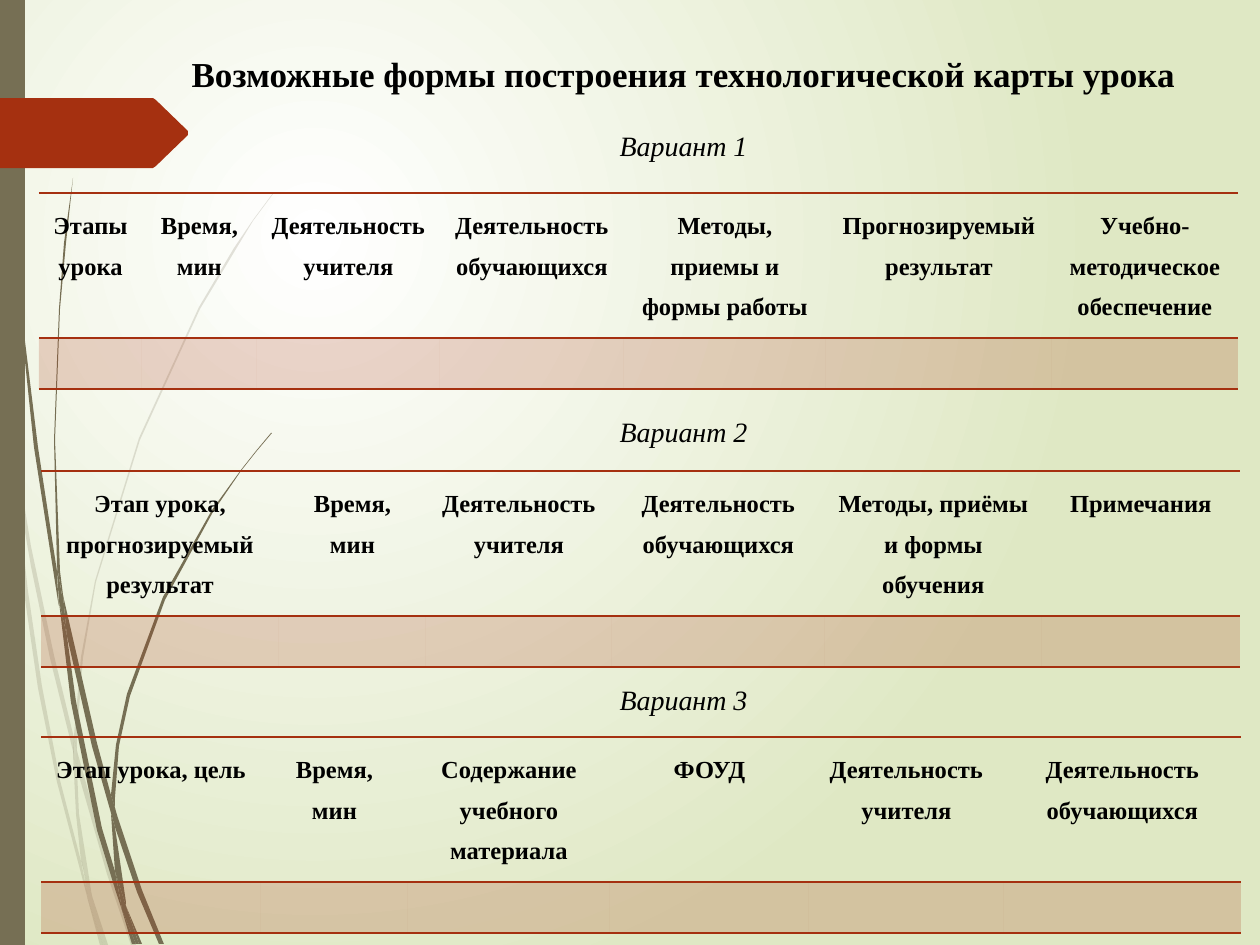
"""Build the slide with three variants of a lesson technology map."""
from lxml import etree
from pptx import Presentation
from pptx.dml.color import RGBColor
from pptx.enum.shapes import MSO_SHAPE
from pptx.enum.text import MSO_ANCHOR, PP_ALIGN
from pptx.oxml.ns import qn
from pptx.util import Emu, Pt

RECTANGLE = MSO_SHAPE.RECTANGLE
CENTER = PP_ALIGN.CENTER
TOP = MSO_ANCHOR.TOP

SCALE = 914400 / 126
WIDTH, HEIGHT = 1260, 945
FONT = "Times New Roman"
NO_STYLE = "{2D5ABB26-0587-4C30-8999-92F81FD0307C}"
ROW_HEIGHTS = (145, 51)
COLORS = {"center": "FFFFFF", "edge": "DFE8C4", "stem": "766F54",
          "accent": "A53010", "text": "000000"}

PALE_STEMS = (
    ((10, 441), (8, 406), (0, 355), (0, 377), (9, 433)),
    ((50, 658), (74, 755), (74, 738), (54, 655), (31, 546), (13, 435),
     (15, 474), (31, 566)),
    ((81, 765), (77, 751), (77, 769), (107, 874), (131, 945), (136, 945), (111, 872)),
    ((105, 945), (108, 945), (92, 896)),
    ((81, 861), (60, 780), (42, 686), (28, 591), (15, 474), (10, 441), (24, 592),
     (38, 688), (57, 782), (81, 873), (88, 900), (87, 891)),
    ((73, 755), (76, 814), (81, 861), (84, 872), (92, 896), (91, 890), (79, 814),
     (77, 769), (77, 766)),
    ((77, 736), (83, 658), (96, 582), (140, 440), (200, 309), (236, 249), (253, 221),
     (273, 194), (273, 193), (253, 220), (234, 248), (199, 307), (139, 438),
     (95, 581), (81, 657), (74, 736), (74, 738), (77, 751)),
    ((88, 900), (100, 945), (103, 945)),
    ((77, 766), (77, 769), (77, 751), (74, 738), (73, 755)),
    ((84, 872), (82, 861), (87, 891), (88, 900), (103, 945), (105, 945), (92, 896)),
)
DARK_STEMS = (
    ((6, 139), (18, 294), (34, 447), (58, 601), (59, 606), (57, 576), (57, 571),
     (38, 447), (19, 292), (8, 137), (5, 60), (4, 0), (3, 0), (4, 60)),
    ((92, 746), (111, 813), (111, 798), (111, 795), (97, 743), (63, 595), (67, 636)),
    ((118, 818), (115, 808), (115, 827), (137, 892), (159, 944), (164, 944), (142, 890)),
    ((115, 871), (102, 828), (76, 701), (67, 636), (59, 601), (71, 702), (97, 830),
     (116, 892), (122, 910), (121, 903)),
    ((63, 595), (60, 571), (55, 440), (60, 309), (66, 243), (73, 178), (64, 243),
     (59, 309), (54, 440), (57, 566), (62, 595)),
    ((139, 944), (142, 944), (126, 906)),
    ((59, 601), (67, 636), (63, 595), (62, 595), (57, 566), (57, 571)),
    ((115, 798), (119, 746), (130, 696), (165, 600), (213, 512), (241, 471),
     (256, 452), (272, 433), (271, 433), (256, 451), (241, 470), (212, 510),
     (163, 597), (127, 694), (116, 745), (111, 795), (115, 808)),
    ((122, 910), (132, 944), (136, 944)),
    ((111, 813), (115, 871), (121, 890), (126, 906), (126, 902), (115, 827), (113, 820)),
    ((111, 813), (113, 820), (115, 827), (115, 808), (111, 795)),
    ((121, 890), (115, 871), (121, 903), (122, 910), (136, 944), (139, 944), (126, 906)),
)
ARROW = ((188, 135), (156, 166), (153, 168), (0, 168), (0, 98), (153, 98),
         (156, 100), (188, 131))

VARIANTS = (
    ("Вариант 1", (606, 122, 155, 47), 1.0, (39, 193), (
        ("Этапы урока", 103), ("Время, мин", 115), ("Деятельность учителя", 183),
        ("Деятельность обучающихся", 184), ("Методы, приемы и формы работы", 202),
        ("Прогнозируемый результат", 226), ("Учебно-методическое обеспечение", 186))),
    ("Вариант 2", (606, 392, 155, 58), 1.5, (41, 471), (
        ("Этап урока, прогнозируемый результат", 238), ("Время, мин", 147),
        ("Деятельность учителя", 186), ("Деятельность обучающихся", 213),
        ("Методы, приёмы и формы обучения", 217), ("Примечания", 198))),
    ("Вариант 3", (606, 660, 155, 58), 1.5, (41, 737), (
        ("Этап урока, цель", 220), ("Время, мин", 147),
        ("Содержание учебного материала", 202), ("ФОУД", 199),
        ("Деятельность учителя", 195), ("Деятельность обучающихся", 237))),
)


def px(length):
    """Turn pixels into EMU."""
    return Emu(round(length * SCALE))


def color(name):
    """Return a palette colour."""
    return RGBColor.from_string(COLORS[name])


def set_background(slide):
    """Fill the background with a radial gradient."""
    fill = slide.background.fill
    fill.gradient()
    for stop, name in zip(fill.gradient_stops, ("center", "edge")):
        stop.color.rgb = color(name)
    linear = next(slide.element.iter(qn("a:lin")))
    radial = etree.Element(qn("a:path"), path="circle")
    etree.SubElement(radial, qn("a:fillToRect"), l="50000", t="50000",
                     r="100000", b="100000")
    linear.getparent().replace(linear, radial)


def paint(shape, name):
    """Give a shape a flat fill without line or shadow."""
    shape.shadow.inherit = False
    shape.fill.solid()
    shape.fill.fore_color.rgb = color(name)
    shape.line.fill.background()


def make_pale(element):
    """Make the solid fill of an element 20 percent opaque."""
    rgb = next(element.iter(qn("a:srgbClr")))
    etree.SubElement(rgb, qn("a:alpha"), val="20000")


def add_outline(slide, points, name):
    """Draw a filled polygon."""
    builder = slide.shapes.build_freeform(*points[0], scale=SCALE)
    builder.add_line_segments(points[1:], close=True)
    shape = builder.convert_to_shape()
    paint(shape, name)
    return shape


def add_decoration(slide):
    """Draw the stems, the side bar and the arrow."""
    for points in PALE_STEMS:
        make_pale(add_outline(slide, points, "stem").element)
    for points in DARK_STEMS:
        add_outline(slide, points, "stem")
    paint(slide.shapes.add_shape(RECTANGLE, 0, 0, px(25), px(HEIGHT)), "stem")
    add_outline(slide, ARROW, "accent")


def write(frame, text, size, spacing=1.5, bold=False, italic=False):
    """Write one centred paragraph."""
    paragraph = frame.paragraphs[0]
    paragraph.text = text
    paragraph.alignment = CENTER
    paragraph.line_spacing = spacing
    font = paragraph.font
    font.name, font.size, font.bold, font.italic = FONT, Pt(size), bold, italic
    font.color.rgb = color("text")


def add_title(slide, text):
    """Place and fill the title placeholder."""
    title = slide.shapes.title
    title.left, title.top, title.width, title.height = map(px, (175, 25, 1017, 77))
    title.text_frame.word_wrap = False
    title.text_frame.vertical_anchor = TOP
    write(title.text_frame, text, 20, bold=True)


def add_label(slide, text, box, spacing):
    """Add the italic caption of a variant."""
    label = slide.shapes.add_textbox(*map(px, box))
    label.text_frame.word_wrap = False
    write(label.text_frame, text, 16, spacing, italic=True)


def add_borders(cell):
    """Rule a cell above and below."""
    properties = cell._tc.get_or_add_tcPr()
    for index, side in enumerate(("a:lnT", "a:lnB")):
        line = etree.Element(qn(side), w=str(Pt(1)))
        fill = etree.SubElement(line, qn("a:solidFill"))
        etree.SubElement(fill, qn("a:srgbClr"), val=COLORS["accent"])
        properties.insert(index, line)


def add_variant_table(slide, corner, columns):
    """Add a header row and a tinted empty row."""
    total = sum(width for _, width in columns)
    frame = slide.shapes.add_table(2, len(columns), *map(px, corner), px(total),
                                   px(sum(ROW_HEIGHTS)))
    table = frame.table
    next(frame.element.iter(qn("a:tableStyleId"))).text = NO_STYLE
    for row, height in zip(table.rows, ROW_HEIGHTS):
        row.height = px(height)
    for index, (heading, width) in enumerate(columns):
        table.columns[index].width = px(width)
        header, blank = table.cell(0, index), table.cell(1, index)
        write(header.text_frame, heading, 14, bold=True)
        header.fill.background()
        blank.fill.solid()
        blank.fill.fore_color.rgb = color("accent")
        make_pale(blank._tc)
        add_borders(header)
        add_borders(blank)


def main():
    """Build and save the presentation."""
    presentation = Presentation()
    presentation.slide_width, presentation.slide_height = px(WIDTH), px(HEIGHT)
    slide = presentation.slides.add_slide(presentation.slide_layouts[5])
    set_background(slide)
    add_decoration(slide)
    add_title(slide, "Возможные формы построения технологической карты урока")
    for label, box, spacing, corner, columns in VARIANTS:
        add_label(slide, label, box, spacing)
        add_variant_table(slide, corner, columns)
    presentation.save("out.pptx")


if __name__ == "__main__":
    main()
